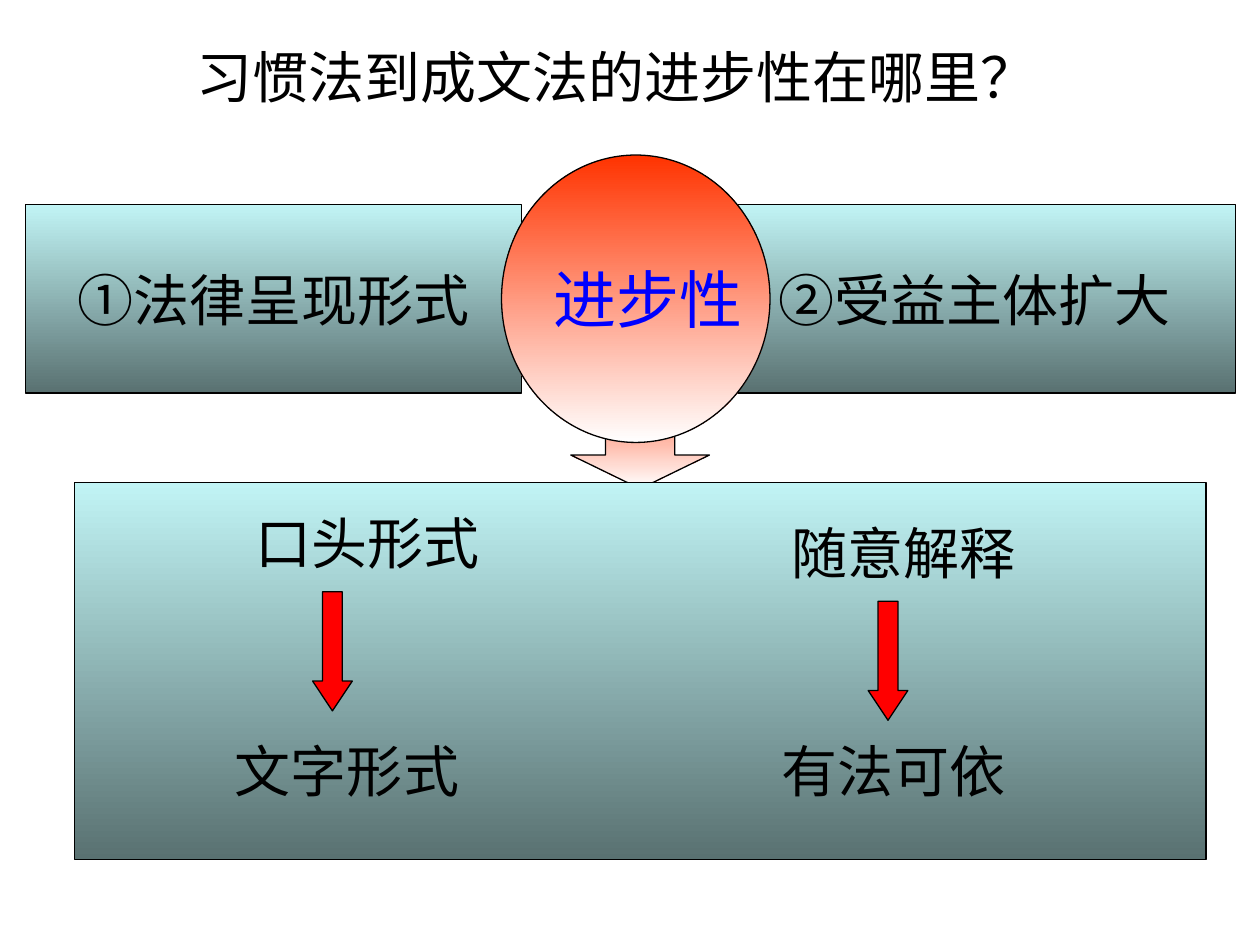
from pptx import Presentation
from pptx.dml.color import RGBColor
from pptx.enum.shapes import MSO_SHAPE as Shape
from pptx.enum.text import MSO_ANCHOR as Anchor, MSO_AUTO_SIZE as AutoSize, PP_ALIGN as Align
from pptx.util import Pt

TITLE = "习惯法到成文法的进步性在哪里？"
TEAL = ("C1F4F5", "597171")
RED_FADE = ("FF3300", "FFFFFF")
BLACK, RED, BLUE = "000000", "FF0000", "0000FF"

# left, top, width, height
MAIN_ARROW = (326.2, 202.3, 79.2, 77)
PANEL = (42.5, 275.8, 646.6, 215.3)
HUB = (286.6, 88.6, 153.4, 164.2)
ASPECT_TOP, ASPECT_HEIGHT = 116.7, 108

# text, left, width, alignment, left inset
ASPECTS = [
    ("①法律呈现形式", 14.4, 283.5, Align.CENTER, 7.2),
    ("②受益主体扩大", 416.9, 289.2, Align.LEFT, 28),
]

# (before, left, top), (after, left, top), (arrow left, arrow top)
CHANGES = [
    (("口头形式", 139, 287.3), ("文字形式", 127.2, 417.6), (178.6, 338.2)),
    (("随意解释", 445, 293), ("有法可依", 439.2, 417.6), (496.1, 343.6)),
]
LABEL_SIZE = (142.6, 45.4)
CHANGE_ARROW_SIZE = (22.7, 68)


def color(hex_code):
    return RGBColor.from_string(hex_code)


def write(box, words, size=32, ink=BLACK, align=Align.LEFT, inset=7.2,
          anchor=Anchor.MIDDLE, wrap=False):
    frame = box.text_frame
    frame.text = words
    frame.word_wrap = wrap
    frame.auto_size = AutoSize.NONE
    frame.vertical_anchor = anchor
    frame.margin_left = Pt(inset)
    paragraph = frame.paragraphs[0]
    paragraph.alignment = align
    font = paragraph.runs[0].font
    font.name, font.size = "Arial", Pt(size)
    font.color.rgb = color(ink)


def add_block(slide, kind, bounds, *colors):
    """Add an outlined shape; two colours make a top-to-bottom gradient."""
    block = slide.shapes.add_shape(kind, *map(Pt, bounds))
    block.shadow.inherit = False
    block.line.color.rgb = color(BLACK)
    block.line.width = Pt(0.75)
    if len(colors) == 1:
        block.fill.solid()
        block.fill.fore_color.rgb = color(colors[0])
    else:
        block.fill.gradient()
        block.fill.gradient_angle = 270
        for stop, hex_code in zip(block.fill.gradient_stops, colors):
            stop.color.rgb = color(hex_code)
    return block


def main():
    deck = Presentation()
    deck.slide_width, deck.slide_height = Pt(720), Pt(540)
    slide = deck.slides.add_slide(deck.slide_layouts[5])

    title = slide.shapes.title
    title.left, title.top, title.width, title.height = map(Pt, (0, 20.9, 720, 46))
    write(title, TITLE, inset=112.3, anchor=Anchor.TOP, wrap=True)

    add_block(slide, Shape.DOWN_ARROW, MAIN_ARROW, *RED_FADE).adjustments[1] = 0.25
    for words, left, width, align, inset in ASPECTS:
        bounds = (left, ASPECT_TOP, width, ASPECT_HEIGHT)
        aspect = add_block(slide, Shape.RECTANGLE, bounds, *TEAL)
        write(aspect, words, align=align, inset=inset)
    add_block(slide, Shape.RECTANGLE, PANEL, *TEAL)
    hub = add_block(slide, Shape.OVAL, HUB, *RED_FADE)
    write(hub, "进步性", size=36, ink=BLUE)

    for before, after, arrow_corner in CHANGES:
        arrow = add_block(slide, Shape.DOWN_ARROW, arrow_corner + CHANGE_ARROW_SIZE, RED)
        arrow.adjustments[1] = 0.75
        for words, left, top in (before, after):
            label = slide.shapes.add_textbox(*map(Pt, (left, top) + LABEL_SIZE))
            write(label, words, anchor=Anchor.TOP)

    deck.save("out.pptx")


if __name__ == "__main__":
    main()
